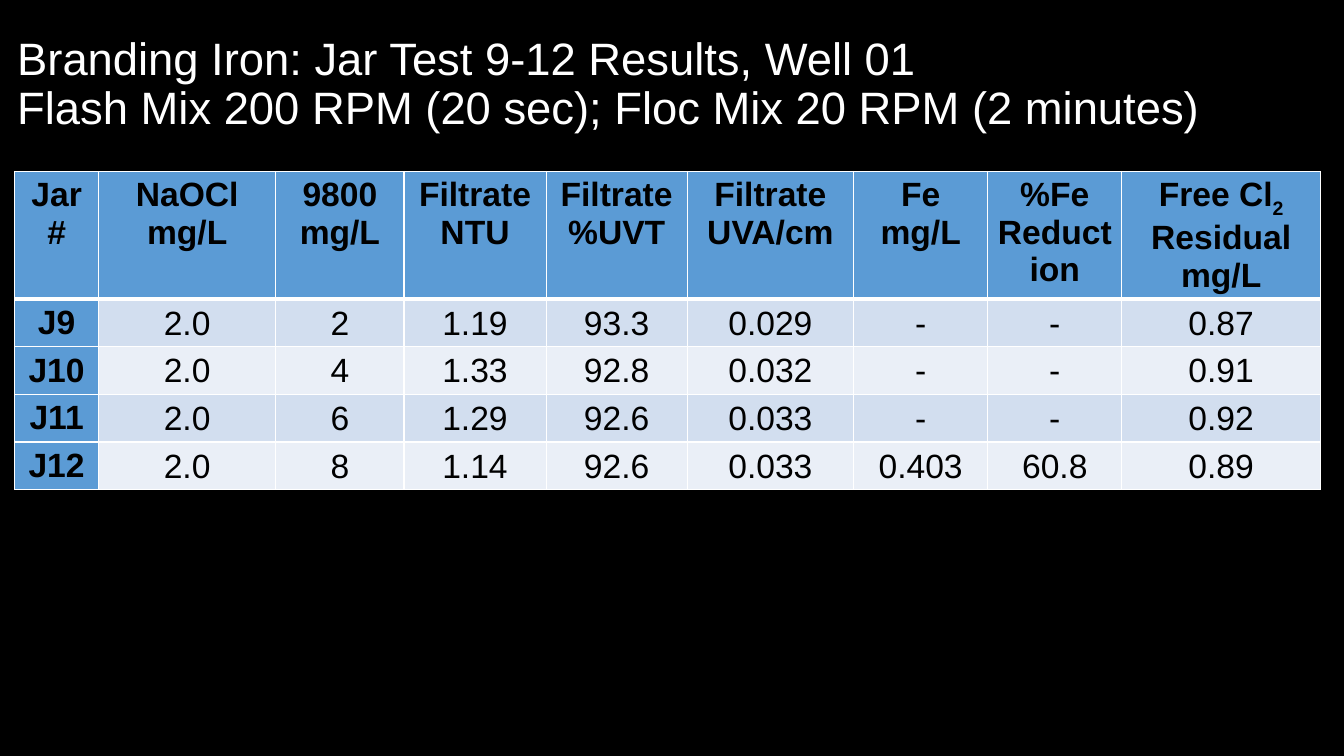
from lxml.etree import SubElement
from pptx import Presentation
from pptx.dml.color import RGBColor
from pptx.enum.text import MSO_ANCHOR, MSO_AUTO_SIZE, PP_ALIGN
from pptx.oxml.ns import qn
from pptx.util import Inches, Pt

TITLE = ("Branding Iron: Jar Test 9-12 Results, Well 01\v"
         "Flash Mix 200 RPM (20 sec); Floc Mix 20 RPM (2 minutes)")
HEADERS = ["Jar\n#", "NaOCl\nmg/L", "9800\nmg/L", "Filtrate\nNTU", "Filtrate\n%UVT",
           "Filtrate\nUVA/cm", "Fe\nmg/L", "%Fe\nReduction", "Free Cl_2\nResidual\nmg/L"]
RESULTS = [
    ["J9", "2.0", "2", "1.19", "93.3", "0.029", "-", "-", "0.87"],
    ["J10", "2.0", "4", "1.33", "92.8", "0.032", "-", "-", "0.91"],
    ["J11", "2.0", "6", "1.29", "92.6", "0.033", "-", "-", "0.92"],
    ["J12", "2.0", "8", "1.14", "92.6", "0.033", "0.403", "60.8", "0.89"],
]
# Percent of the slide's width and height
COL_WIDTHS = [6.23, 13.2, 9.53, 10.58, 10.5, 12.38, 9.98, 9.98, 14.78]
ROW_HEIGHTS = [13.87] + [5.87] * len(RESULTS)


def rgb(hex_color):
    return RGBColor.from_string(hex_color)


def write(tf, text, size=24, color="000000", bold=False, align=PP_ALIGN.CENTER,
          spacing=None, font="Arial"):
    """Fill a text frame: a newline starts a paragraph, an underscore a subscript."""
    tf.text = text.replace("_", "")
    for p, line in zip(tf.paragraphs, text.split("\n")):
        p.alignment, p.line_spacing = align, spacing
        base, _, subscript = line.partition("_")
        if subscript:
            p.runs[0].text = base
            r = p.add_run()
            r.text = subscript
            r.font._element.set("baseline", "-25000")
        for r in p.runs:
            r.font.name, r.font.size, r.font.bold = font, Pt(size), bold
            r.font.color.rgb = rgb(color)


class Deck:
    ink, paper, accent, line = "FFFFFF", "000000", "5B9BD5", "FFFFFF"
    bands = ("D2DEEF", "EAEFF7")

    def __init__(self):
        self.prs = Presentation()
        self.prs.slide_width, self.prs.slide_height = Inches(13.33), Inches(7.5)
        self.s = self.prs.slides.add_slide(self.prs.slide_layouts[5])
        self.s.background.fill.solid()
        self.s.background.fill.fore_color.rgb = rgb(self.paper)

    def x(self, percent):
        return round(self.prs.slide_width * percent / 100)

    def y(self, percent):
        return round(self.prs.slide_height * percent / 100)

    def title(self, text, left, top, width, height):
        sp = self.s.shapes.title
        sp.left, sp.top = self.x(left), self.y(top)
        sp.width, sp.height = self.x(width), self.y(height)
        tf = sp.text_frame
        tf.word_wrap, tf.auto_size = True, MSO_AUTO_SIZE.NONE
        tf.vertical_anchor = MSO_ANCHOR.MIDDLE
        write(tf, text, size=32.4, color=self.ink, align=PP_ALIGN.LEFT, spacing=0.9)

    def table(self, rows, left, top, widths, heights):
        table = self.s.shapes.add_table(
            len(rows), len(widths), self.x(left), self.y(top),
            self.x(sum(widths)), self.y(sum(heights))).table
        for column, width in zip(table.columns, widths):
            column.width = self.x(width)
        for row, height in zip(table.rows, heights):
            row.height = self.y(height)
        for i, row in enumerate(rows):
            for j, text in enumerate(row):
                self.cell(table.cell(i, j), text, i, j)

    def cell(self, cell, text, i, j):
        heading = i == 0 or j == 0
        self.borders(cell, top=3 if i == 1 else 1, bottom=3 if i == 0 else 1)
        cell.fill.solid()
        cell.fill.fore_color.rgb = rgb(self.accent if heading else self.bands[(i - 1) % 2])
        if not heading:
            cell.vertical_anchor = MSO_ANCHOR.MIDDLE
            cell.margin_left = cell.margin_right = cell.margin_top = Inches(0.01)
            cell.margin_bottom = 0
        write(cell.text_frame, text, bold=heading)

    def borders(self, cell, top, bottom):
        tc_pr = cell._tc.get_or_add_tcPr()
        for side, width in (("L", 1), ("R", 1), ("T", top), ("B", bottom)):
            ln = SubElement(tc_pr, qn(f"a:ln{side}"), w=str(Pt(width)))
            fill = SubElement(ln, qn("a:solidFill"))
            SubElement(fill, qn("a:srgbClr"), val=self.line)


def main():
    deck = Deck()
    deck.title(TITLE, 0.53, 1.6, 97.75, 19.33)
    deck.table([HEADERS] + RESULTS, 1.1, 22.67, COL_WIDTHS, ROW_HEIGHTS)
    deck.prs.save("out.pptx")


if __name__ == "__main__":
    main()
